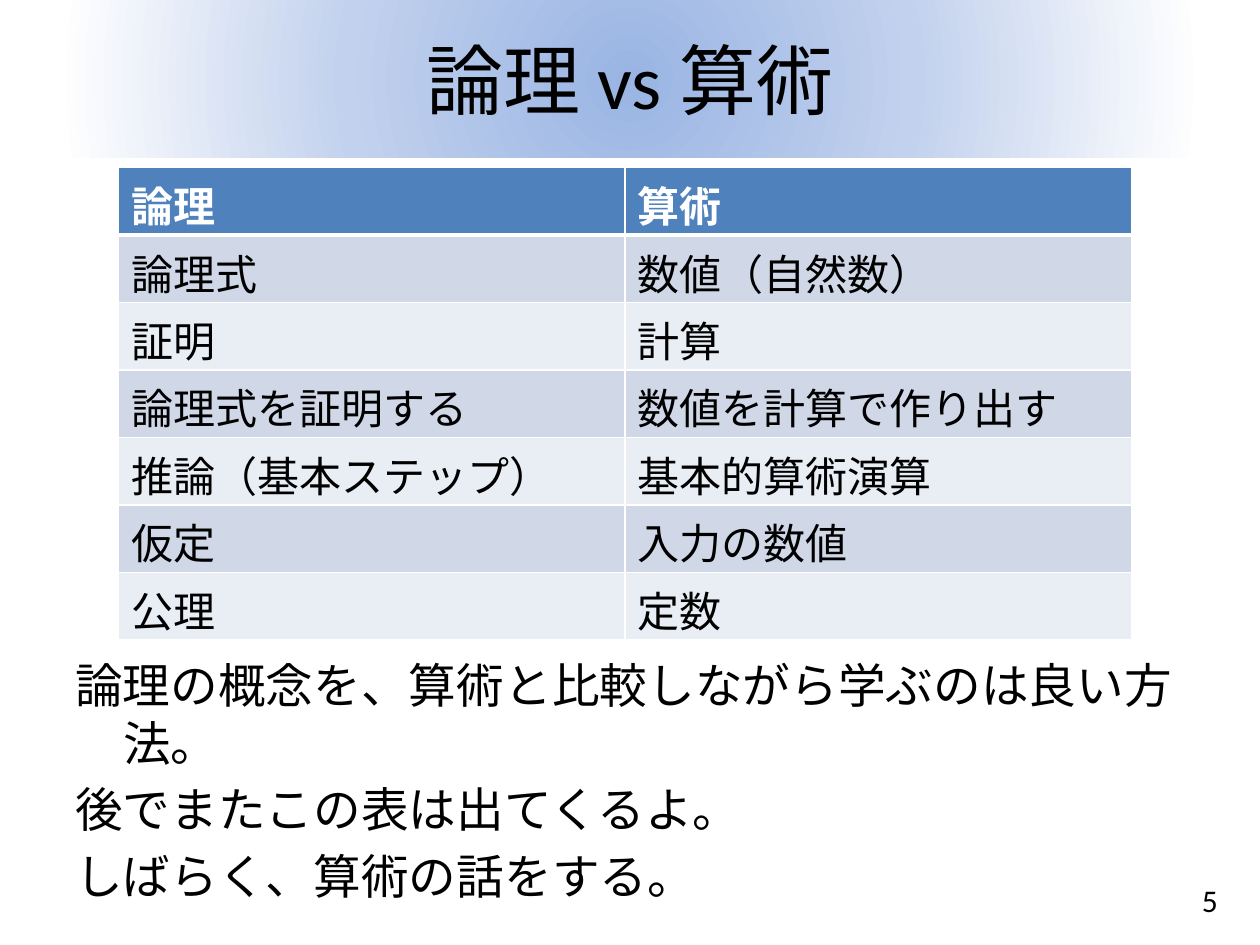
from lxml.etree import SubElement
from pptx import Presentation
from pptx.dml.color import RGBColor
from pptx.enum.lang import MSO_LANGUAGE_ID as Language
from pptx.enum.shapes import MSO_SHAPE as Shape
from pptx.enum.text import MSO_ANCHOR as Anchor, PP_ALIGN as Align
from pptx.oxml import parse_xml
from pptx.oxml.ns import nsdecls, qn
from pptx.util import Inches, Pt

BLACK = RGBColor(0x00, 0x00, 0x00)
WHITE = RGBColor(0xFF, 0xFF, 0xFF)
HEADER_BLUE = RGBColor(0x4F, 0x81, 0xBD)
BAND_DARK = RGBColor(0xD0, 0xD8, 0xE8)
BAND_LIGHT = RGBColor(0xE9, 0xED, 0xF4)
GLOW_STOPS = [
    (0, RGBColor(0x9A, 0xB5, 0xE4)),
    (50, RGBColor(0xC2, 0xD1, 0xED)),
    (100, WHITE),
]

LATIN_FONT = "Calibri"
JAPANESE_FONT = "Noto Sans CJK JP"

COMPARISON = [
    ("論理", "算術"),
    ("論理式", "数値（自然数）"),
    ("証明", "計算"),
    ("論理式を証明する", "数値を計算で作り出す"),
    ("推論（基本ステップ）", "基本的算術演算"),
    ("仮定", "入力の数値"),
    ("公理", "定数"),
]
REMARKS = [
    "論理の概念を、算術と比較しながら学ぶのは良い方法。",
    "後でまたこの表は出てくるよ。",
    "しばらく、算術の話をする。",
]


def write(para, text, size, color=BLACK, name=LATIN_FONT, bold=False):
    para.text = text
    font = para.font
    font.name, font.size, font.bold = name, Pt(size), bold
    font.color.rgb = color
    font.language_id = Language.JAPANESE


def fill_with_glow(shape):
    """Fill the shape with a gradient that fades outward from its centre."""
    stops = "".join(
        f'<a:gs pos="{percent * 1000}"><a:srgbClr val="{color}"/></a:gs>'
        for percent, color in GLOW_STOPS
    )
    glow = parse_xml(
        f'<a:gradFill {nsdecls("a")} rotWithShape="1"><a:gsLst>{stops}</a:gsLst>'
        '<a:path path="circle"><a:fillToRect l="50000" t="50000" r="50000" b="50000"/>'
        "</a:path></a:gradFill>"
    )
    shape.fill.background()
    properties = shape.element.spPr
    properties.replace(properties.find(qn("a:noFill")), glow)


def add_title(page, text):
    banner = page.shapes.add_shape(
        Shape.RECTANGLE, Inches(0.5), 0, Inches(9), Inches(1.25)
    )
    banner.shadow.inherit = False
    banner.line.fill.background()
    fill_with_glow(banner)
    banner.text_frame.vertical_anchor = Anchor.MIDDLE
    para = banner.text_frame.paragraphs[0]
    para.alignment = Align.CENTER
    write(para, text, 44)


def set_borders(cell, bottom_width):
    properties = cell._tc.get_or_add_tcPr()
    widths = {"a:lnL": 1, "a:lnR": 1, "a:lnT": 1, "a:lnB": bottom_width}
    for position, (tag, width) in enumerate(widths.items()):
        line = SubElement(properties, qn(tag), w=str(Pt(width)))
        fill = SubElement(line, qn("a:solidFill"))
        SubElement(fill, qn("a:srgbClr"), val=str(WHITE))
        properties.insert(position, line)


def add_comparison_table(page, rows):
    table = page.shapes.add_table(
        len(rows), 2, Inches(0.94), Inches(1.33), Inches(8.04), Inches(3.75)
    ).table
    for row_index, row in enumerate(rows):
        is_header = row_index == 0
        if is_header:
            background = HEADER_BLUE
        else:
            background = BAND_DARK if row_index % 2 else BAND_LIGHT
        for column_index, text in enumerate(row):
            cell = table.cell(row_index, column_index)
            cell.fill.solid()
            cell.fill.fore_color.rgb = background
            set_borders(cell, 3 if is_header else 1)
            write(
                cell.text_frame.paragraphs[0],
                text,
                24,
                color=WHITE if is_header else BLACK,
                name=JAPANESE_FONT if row_index == 1 else LATIN_FONT,
                bold=is_header,
            )


def add_remarks(page, remarks):
    box = page.shapes.add_textbox(Inches(0.5), Inches(5.16), Inches(9), Inches(1.54))
    frame = box.text_frame
    frame.word_wrap = True
    for index, remark in enumerate(remarks):
        para = frame.add_paragraph() if index else frame.paragraphs[0]
        write(para, remark, 27.2)
        para.space_before = Pt(5.5)
        properties = para._p.get_or_add_pPr()
        properties.set("marL", str(Inches(0.38)))
        properties.set("indent", str(Inches(-0.38)))


def add_page_number(page, number):
    box = page.shapes.add_textbox(Inches(9.44), Inches(6.94), Inches(0.42), Inches(0.4))
    box.text_frame.word_wrap = True
    write(box.text_frame.paragraphs[0], str(number), 18)


def main():
    deck = Presentation()
    deck.slide_width, deck.slide_height = Inches(10), Inches(7.5)
    page = deck.slides.add_slide(deck.slide_layouts[6])
    add_title(page, "論理 vs 算術")
    add_remarks(page, REMARKS)
    add_page_number(page, 5)
    add_comparison_table(page, COMPARISON)
    deck.save("out.pptx")


if __name__ == "__main__":
    main()
